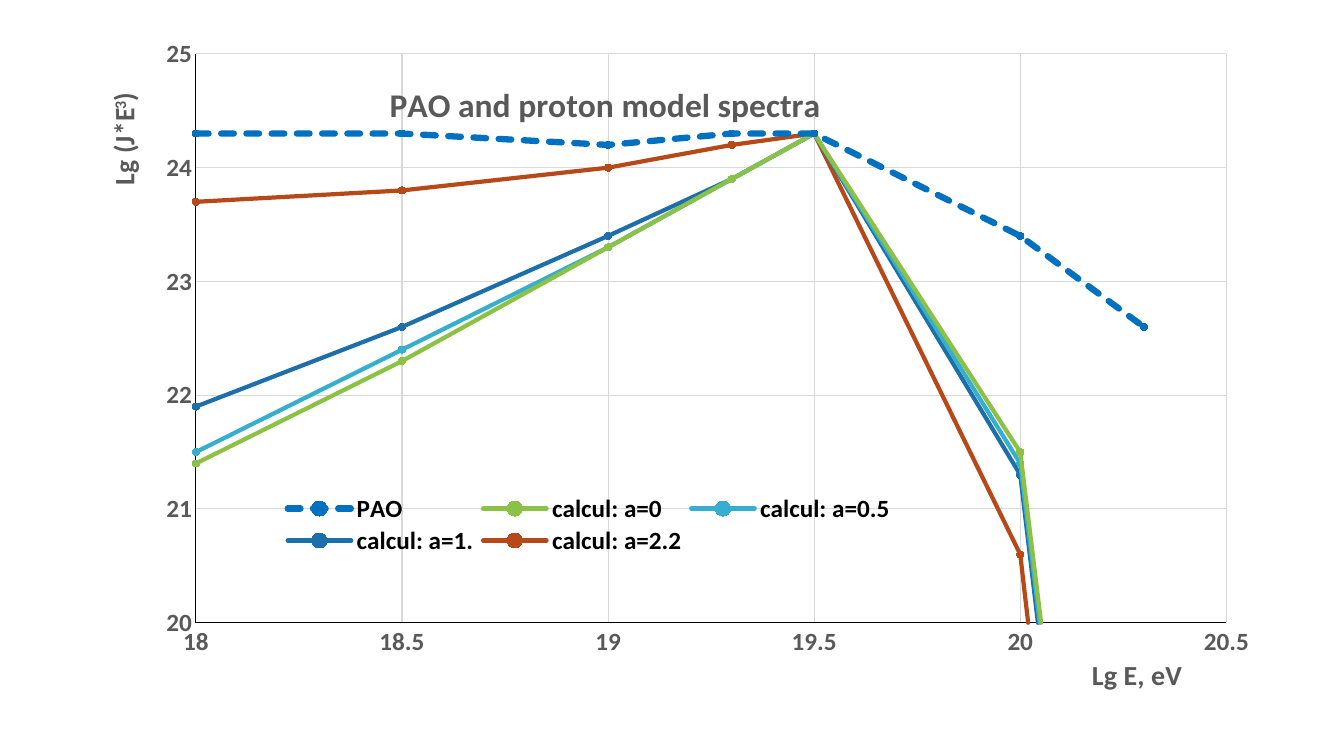
import pptx
import pptx.chart.data
import pptx.dml.color
import pptx.enum.chart
import pptx.enum.dml
import pptx.oxml
import pptx.oxml.ns
import pptx.util

Pt = pptx.util.Pt
GREY, GRID, BLACK = "595959", "D9D9D9", "000000"

LG_ENERGY = [17.4, 18, 18.5, 19, 19.3, 19.5, 20, 20.3]
SPECTRA = [
    ("PAO", "0070C0", "1D9A78", 4.5, [24.4, 24.3, 24.3, 24.2, 24.3, 24.3, 23.4, 22.6]),
    ("calcul: a=0", "8BC145", "8BC145", 3, [20.1, 21.4, 22.3, 23.3, 23.9, 24.3, 21.5, 12.6]),
    ("calcul: a=0.5", "36AFCE", "36AFCE", 3, [20.2, 21.5, 22.4, 23.3, 23.9, 24.3, 21.4, 12.5]),
    ("calcul: a=1.", "1D6FA9", "1D6FA9", 3, [20.7, 21.9, 22.6, 23.4, 23.9, 24.3, 21.3, 12.2]),
    ("calcul: a=2.2", "B74919", "B74919", 3, [23.3, 23.7, 23.8, 24, 24.2, 24.3, 20.6, 11.2]),
]


def color(hex_string):
    return pptx.dml.color.RGBColor.from_string(hex_string)


def apply(target, values):
    for name, value in values.items():
        setattr(target, name, value)


class SpectrumSlide:
    font_name = "Calibri"

    def __init__(self, presentation):
        self.slide = presentation.slides.add_slide(presentation.slide_layouts[6])

    def font(self, font, size, hex_string, bold=True):
        apply(font, {"name": self.font_name, "size": Pt(size), "bold": bold})
        font.color.rgb = color(hex_string)

    def line(self, line, hex_string, width):
        line.color.rgb = color(hex_string)
        line.width = Pt(width)

    def place(self, element, index, left, top, width=None, height=None, inner=False):
        for old_layout in element.findall(pptx.oxml.ns.qn("c:layout")):
            element.remove(old_layout)
        parts = [("layoutTarget", "inner")] if inner else []
        parts += [("xMode", "edge"), ("yMode", "edge"), ("x", left), ("y", top)]
        if width:
            parts += [("w", width), ("h", height)]
        content = "".join(f'<c:{name} val="{value}"/>' for name, value in parts)
        namespace = pptx.oxml.ns.nsdecls("c")
        element.insert(index, pptx.oxml.parse_xml(
            f"<c:layout {namespace}><c:manualLayout>{content}</c:manualLayout></c:layout>"))

    def title(self, title, runs, size, left, top, rotation=0):
        frame = title.text_frame
        for text, baseline in runs:
            run = frame.paragraphs[0].add_run()
            run.text = text
            self.font(run.font, size, GREY)
            if baseline:
                run.font._element.set("baseline", str(baseline))
        if rotation:
            frame._txBody.bodyPr.set("rot", str(rotation * 60000))
            frame._txBody.bodyPr.set("vert", "horz")
        self.place(title._element, 1, left, top)

    def axis(self, axis, low, high, step):
        apply(axis, {
            "minimum_scale": low,
            "maximum_scale": high,
            "major_unit": step,
            "has_major_gridlines": True,
            "major_tick_mark": pptx.enum.chart.XL_TICK_MARK.NONE,
            "minor_tick_mark": pptx.enum.chart.XL_TICK_MARK.NONE,
            "crosses": pptx.enum.chart.XL_AXIS_CROSSES.MINIMUM,
        })
        self.font(axis.tick_labels.font, 18, GREY)
        self.line(axis.format.line, BLACK, 0.75)
        self.line(axis.major_gridlines.format.line, GRID, 0.75)

    def series(self, series, line_color, marker_color, width):
        series.smooth = True
        line = series.format.line
        self.line(line, line_color, width)
        line._get_or_add_ln().set("cap", "rnd")
        apply(series.marker, {"style": pptx.enum.chart.XL_MARKER_STYLE.CIRCLE, "size": 5})
        series.marker.format.fill.solid()
        series.marker.format.fill.fore_color.rgb = color(marker_color)
        self.line(series.marker.format.line, line_color, 0.75)

    def legend(self, chart, left, top, width, height):
        chart.has_legend = True
        apply(chart.legend, {
            "position": pptx.enum.chart.XL_LEGEND_POSITION.TOP,
            "include_in_layout": True,
        })
        self.font(chart.legend.font, 18, BLACK)
        self.place(chart.legend._element, 1, left, top, width, height)

    def chart(self, left, top, width, height):
        data = pptx.chart.data.XyChartData()
        for name, _, _, _, values in SPECTRA:
            points = data.add_series(name)
            for energy, value in zip(LG_ENERGY, values):
                points.add_data_point(energy, value)
        chart = self.slide.shapes.add_chart(
            pptx.enum.chart.XL_CHART_TYPE.XY_SCATTER_SMOOTH,
            Pt(left), Pt(top), Pt(width), Pt(height), data).chart
        self.font(chart.font, 10, BLACK, False)
        plot = chart.plots[0]
        plot.vary_by_categories = False
        for series, (_, line_color, marker_color, line_width, _) in zip(plot.series, SPECTRA):
            self.series(series, line_color, marker_color, line_width)
        plot.series[0].format.line.dash_style = pptx.enum.dml.MSO_LINE.SQUARE_DOT
        self.place(chart._chartSpace.chart.plotArea, 0, 0.1, 0.036, 0.879, 0.863, True)
        return chart


def main():
    presentation = pptx.Presentation()
    apply(presentation, {"slide_width": Pt(960), "slide_height": Pt(540)})
    spectrum = SpectrumSlide(presentation)
    chart = spectrum.chart(56.2, 21.6, 837.4, 478.8)
    spectrum.axis(chart.category_axis, 18, 20.5, 0.5)
    spectrum.axis(chart.value_axis, 20, 25, 1)
    spectrum.title(chart.chart_title, [("PAO and proton model spectra", 0)], 24, 0.26, 0.07)
    chart.chart_title.include_in_layout = True
    spectrum.title(chart.category_axis.axis_title, [("Lg E, eV", 0)], 20, 0.86, 0.94)
    spectrum.title(chart.value_axis.axis_title,
                   [("Lg (J*E", 0), ("3", 30000), (")", 0)], 20, 0.02, 0.09, -90)
    spectrum.legend(chart, 0.17, 0.7, 0.53, 0.1)
    presentation.save("out.pptx")


if __name__ == "__main__":
    main()
